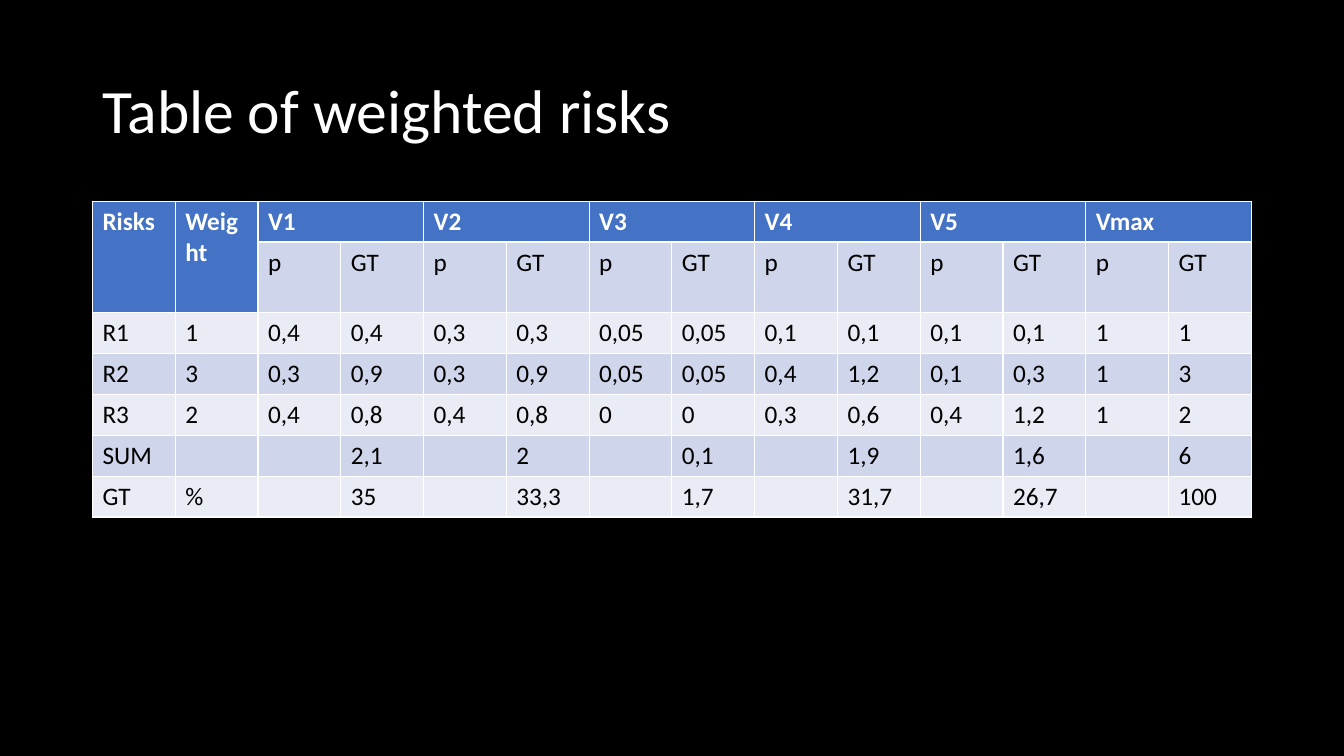
from pptx import Presentation
from pptx.dml.color import RGBColor
from pptx.enum.text import MSO_ANCHOR
from pptx.util import Cm, Pt

BLACK = RGBColor(0x00, 0x00, 0x00)
WHITE = RGBColor(0xFF, 0xFF, 0xFF)
HEADER_BLUE = RGBColor(0x44, 0x72, 0xC4)
BAND_DARK = RGBColor(0xCF, 0xD5, 0xEA)
BAND_LIGHT = RGBColor(0xE9, 0xEB, 0xF5)
FONT = "Calibri"

VARIANTS = ["V1", "V2", "V3", "V4", "V5", "Vmax"]
header = ["Risks", "Weight"]
for variant in VARIANTS:
    header += [variant, ""]
rows = [
    header,
    ["", ""] + ["p", "GT"] * len(VARIANTS),
    ["R1", "1", "0,4", "0,4", "0,3", "0,3", "0,05", "0,05", "0,1", "0,1", "0,1", "0,1", "1", "1"],
    ["R2", "3", "0,3", "0,9", "0,3", "0,9", "0,05", "0,05", "0,4", "1,2", "0,1", "0,3", "1", "3"],
    ["R3", "2", "0,4", "0,8", "0,4", "0,8", "0", "0", "0,3", "0,6", "0,4", "1,2", "1", "2"],
    ["SUM", "", "", "2,1", "", "2", "", "0,1", "", "1,9", "", "1,6", "", "6"],
    ["GT", "%", "", "35", "", "33,3", "", "1,7", "", "31,7", "", "26,7", "", "100"],
]

presentation = Presentation()
presentation.slide_width = Cm(33.87)
presentation.slide_height = Cm(19.05)
slide = presentation.slides.add_slide(presentation.slide_layouts[6])
slide.background.fill.solid()
slide.background.fill.fore_color.rgb = BLACK

title = slide.shapes.add_textbox(Cm(2.33), Cm(1.01), Cm(29.21), Cm(3.68))
title.text_frame.word_wrap = True
title.text_frame.vertical_anchor = MSO_ANCHOR.MIDDLE
paragraph = title.text_frame.paragraphs[0]
paragraph.text = "Table of weighted risks"
paragraph.line_spacing = 0.9
paragraph.font.size = Pt(44)
paragraph.font.name = FONT
paragraph.font.color.rgb = WHITE

table = slide.shapes.add_table(
    len(rows), len(header), Cm(2.33), Cm(5.07), Cm(29.21), Cm(7.21)
).table
for column in table.columns:
    column.width = Cm(29.21 / len(header))
for row in table.rows:
    row.height = Cm(1.03)

for column_index in range(2):
    table.cell(0, column_index).merge(table.cell(1, column_index))
for column_index in range(2, len(header), 2):
    table.cell(0, column_index).merge(table.cell(0, column_index + 1))

for row_index, values in enumerate(rows):
    for column_index, value in enumerate(values):
        cell = table.cell(row_index, column_index)
        is_header = row_index == 0 or (row_index == 1 and column_index < 2)
        band = BAND_DARK if row_index % 2 else BAND_LIGHT
        cell.fill.solid()
        cell.fill.fore_color.rgb = HEADER_BLUE if is_header else band
        if value:
            paragraph = cell.text_frame.paragraphs[0]
            paragraph.text = value
            paragraph.font.size = Pt(18)
            paragraph.font.name = FONT
            paragraph.font.bold = is_header
            paragraph.font.color.rgb = WHITE if is_header else BLACK

presentation.save("out.pptx")
